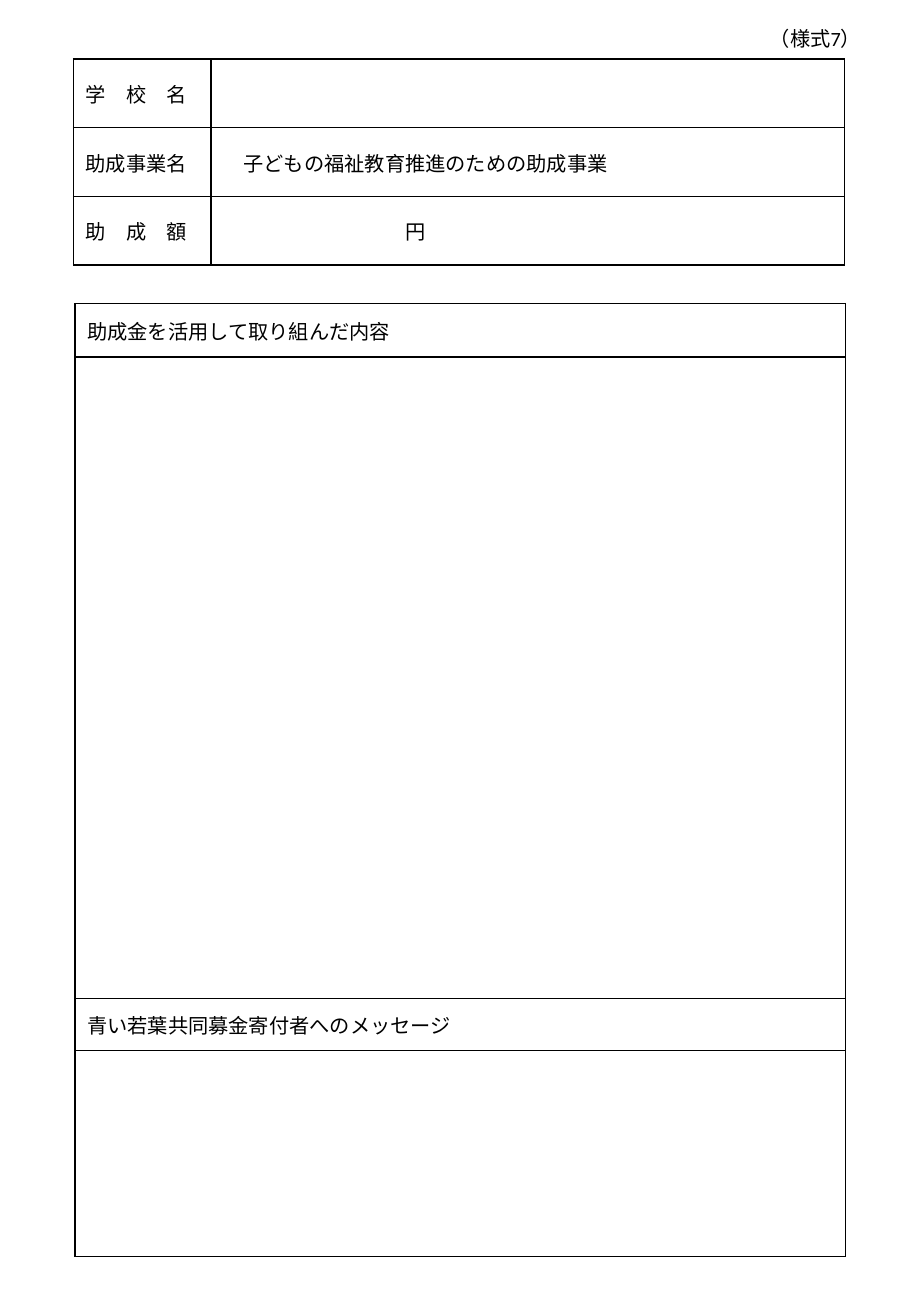
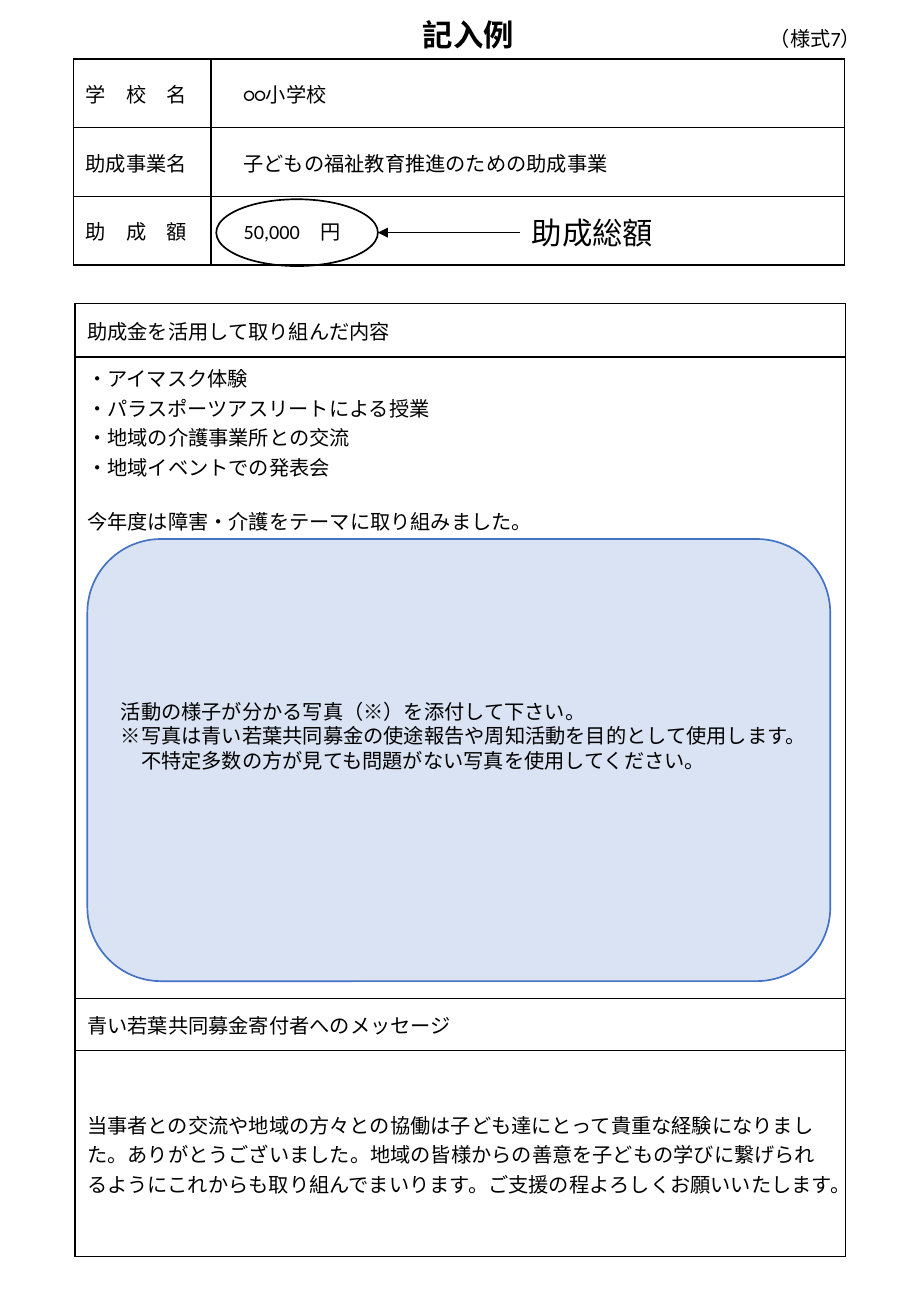
from lxml import etree
from pptx import Presentation
from pptx.dml.color import RGBColor
from pptx.enum.shapes import MSO_CONNECTOR as CONN, MSO_SHAPE as SHAPE
from pptx.enum.text import MSO_ANCHOR as ANCHOR, MSO_AUTO_SIZE as AUTO, PP_ALIGN as ALIGN
from pptx.oxml.ns import qn
from pptx.util import Pt

BLACK = RGBColor(0x00, 0x00, 0x00)
BLUE = RGBColor(0x44, 0x72, 0xC4)
PALE_BLUE = RGBColor(0xDA, 0xE3, 0xF3)
FONT = "Calibri"
BODY = {"size": Pt(12), "bold": False, "name": FONT}
LARGE = {**BODY, "size": Pt(18)}
TITLE = {**LARGE, "bold": True}

TITLE_ONLY, BLANK = 5, 6
SUMMARY_BOX = (43.6, 35, 457, 122.1)
REPORT_BOX = (44.5, 180, 456.8, 564.7)
PROJECT = "子どもの福祉教育推進のための助成事業"


# Text helpers
def add_run(p, text, fmt):
    r = p.add_run()
    r.text = text
    for key, value in fmt.items():
        setattr(r.font, key, value)
    r.font.color.rgb = BLACK
    etree.SubElement(r.font._element, qn("a:ea"), typeface=FONT)


def write(tf, lines, fmt=BODY, spacing=None):
    """Write lines of (text, paragraph properties)."""
    for i, (text, props) in enumerate(lines):
        p = tf.paragraphs[0] if i == 0 else tf.add_paragraph()
        p.alignment = ALIGN.LEFT
        if spacing:
            p.line_spacing = Pt(spacing)
        if "before" in props:
            p.space_before = Pt(props["before"])
        pPr = p._p.get_or_add_pPr()
        if "indent" in props:
            pPr.set("marL", str(Pt(props["indent"])))
        if "bullet" in props:
            pPr.set("indent", str(-Pt(props["indent"])))
            etree.SubElement(pPr, qn("a:buFont"), typeface=FONT)
            etree.SubElement(pPr, qn("a:buChar"), char=props["bullet"])
        add_run(p, text, fmt)


def add_label(s, box, text, fmt=BODY):
    sp = s.shapes.add_textbox(*map(Pt, box))
    sp.text_frame.word_wrap = True
    write(sp.text_frame, [(text, {})], fmt)
    return sp


# Table helpers
def set_borders(cell):
    tcPr = cell._tc.get_or_add_tcPr()
    for i, side in enumerate(("lnL", "lnR", "lnT", "lnB")):
        ln = etree.Element(qn("a:" + side), w=str(Pt(1)))
        fill = etree.SubElement(ln, qn("a:solidFill"))
        etree.SubElement(fill, qn("a:srgbClr"), val=str(BLACK))
        tcPr.insert(i, ln)


def add_grid(s, box, widths, heights, rows):
    """Add a plain ruled table; each cell is a list of lines."""
    table = s.shapes.add_table(len(heights), len(widths), *map(Pt, box)).table
    table.first_row = table.horz_banding = False
    for col, width in zip(table.columns, widths):
        col.width = Pt(width)
    for row, height, contents in zip(table.rows, heights, rows):
        row.height = Pt(height)
        for cell, lines in zip(row.cells, contents):
            cell.fill.background()
            set_borders(cell)
            cell.vertical_anchor = ANCHOR.TOP if len(lines) > 1 else ANCHOR.MIDDLE
            write(cell.text_frame, lines, spacing=17.5 if lines else None)


# Regions of the form
def add_summary(s, box, school, amount, amount_indent):
    label_width = 81.6
    values = [("学　校　名", school, 12), ("助成事業名", PROJECT, 12),
              ("助　成　額", amount, amount_indent)]
    rows = [([(label, {})], [(value, {"indent": indent})] if value else [])
            for label, value, indent in values]
    add_grid(s, box, [label_width, box[2] - label_width], [box[3] / 3] * 3, rows)


def add_report(s, box, activities, message):
    heads = 31.5, 30.8
    message_height = 122
    activity_height = box[3] - sum(heads) - message_height
    rows = [([("助成金を活用して取り組んだ内容", {})],), (activities,),
            ([("青い若葉共同募金寄付者へのメッセージ", {})],), (message,)]
    add_grid(s, box, [box[2]], [heads[0], activity_height, heads[1], message_height], rows)


def add_form(prs, layout, school="", amount="円", amount_indent=108, activities=(), message=()):
    s = prs.slides.add_slide(prs.slide_layouts[layout])
    add_summary(s, SUMMARY_BOX, school, amount, amount_indent)
    add_report(s, REPORT_BOX, activities, message)
    add_label(s, (449.3, 12.2, 75, 21.6), "（様式7）")
    return s


# Parts of the filled-in example
def add_title(s, box, text):
    title = s.shapes.title
    title.left, title.top, title.width, title.height = map(Pt, box)
    tf = title.text_frame
    tf.auto_size = AUTO.NONE
    tf.vertical_anchor = ANCHOR.TOP
    write(tf, [(text, {})], TITLE)


def add_photo_area(s, box):
    sp = s.shapes.add_shape(SHAPE.ROUNDED_RECTANGLE, *map(Pt, box))
    sp.shadow.inherit = False
    sp.fill.solid()
    sp.fill.fore_color.rgb = PALE_BLUE
    sp.line.color.rgb = BLUE
    sp.line.width = Pt(1)
    tf = sp.text_frame
    tf.word_wrap = True
    tf.vertical_anchor = ANCHOR.MIDDLE
    tf.margin_bottom = Pt(32.6)
    write(tf, [("活動の様子が分かる写真（※）を添付して下さい。", {}),
               ("※写真は青い若葉共同募金の使途報告や周知活動を目的として使用します。", {}),
               ("不特定多数の方が見ても問題がない写真を使用してください。", {"indent": 12})],
          spacing=14.6)


def add_amount_callout(s, box, text):
    """Ring the amount and point to it from a label on its right."""
    x, y, w, h = box
    middle = y + h / 2
    ring = s.shapes.add_shape(SHAPE.OVAL, *map(Pt, box))
    ring.shadow.inherit = False
    ring.fill.background()
    ring.line.color.rgb = BLACK
    ring.line.width = Pt(1)
    label_x, label_h = x + 180, 28.8
    label = add_label(s, (label_x, middle - label_h / 2, 103.7, label_h), text, LARGE)
    arrow = s.shapes.add_connector(CONN.STRAIGHT, Pt(label_x), Pt(middle), Pt(x + w), Pt(middle))
    arrow.begin_connect(label, 1)
    arrow.line.color.rgb = BLACK
    arrow.line.width = Pt(0.5)
    etree.SubElement(arrow.line._get_or_add_ln(), qn("a:tailEnd"), type="triangle")
    etree.SubElement(arrow._element.spPr, qn("a:effectLst"))


def add_example(prs):
    topics = ["アイマスク体験", "パラスポーツアスリートによる授業",
              "地域の介護事業所との交流", "地域イベントでの発表会"]
    activities = [(topic, {"indent": 4, "bullet": "・"}) for topic in topics]
    activities.append(("今年度は障害・介護をテーマに取り組みました。", {"before": 14.6}))
    message = [("当事者との交流や地域の方々との協働は子ども達にとって貴重な経験になりました。"
                "ありがとうございました。地域の皆様からの善意を子どもの学びに繋げられるように"
                "これからも取り組んでまいります。ご支援の程よろしくお願いいたします。", {})]
    s = add_form(prs, TITLE_ONLY, "○○小学校", "50,000　円", 12, activities, message)
    add_title(s, (243.4, 5.8, 76.3, 28.8), "記入例")
    add_photo_area(s, (51.8, 319.5, 440.4, 262.1))
    add_amount_callout(s, (128.2, 118.1, 95.8, 39.6), "助成総額")


def main():
    prs = Presentation()
    prs.slide_width, prs.slide_height = Pt(540), Pt(780)
    add_form(prs, BLANK)
    add_example(prs)
    prs.save("out.pptx")


if __name__ == "__main__":
    main()
